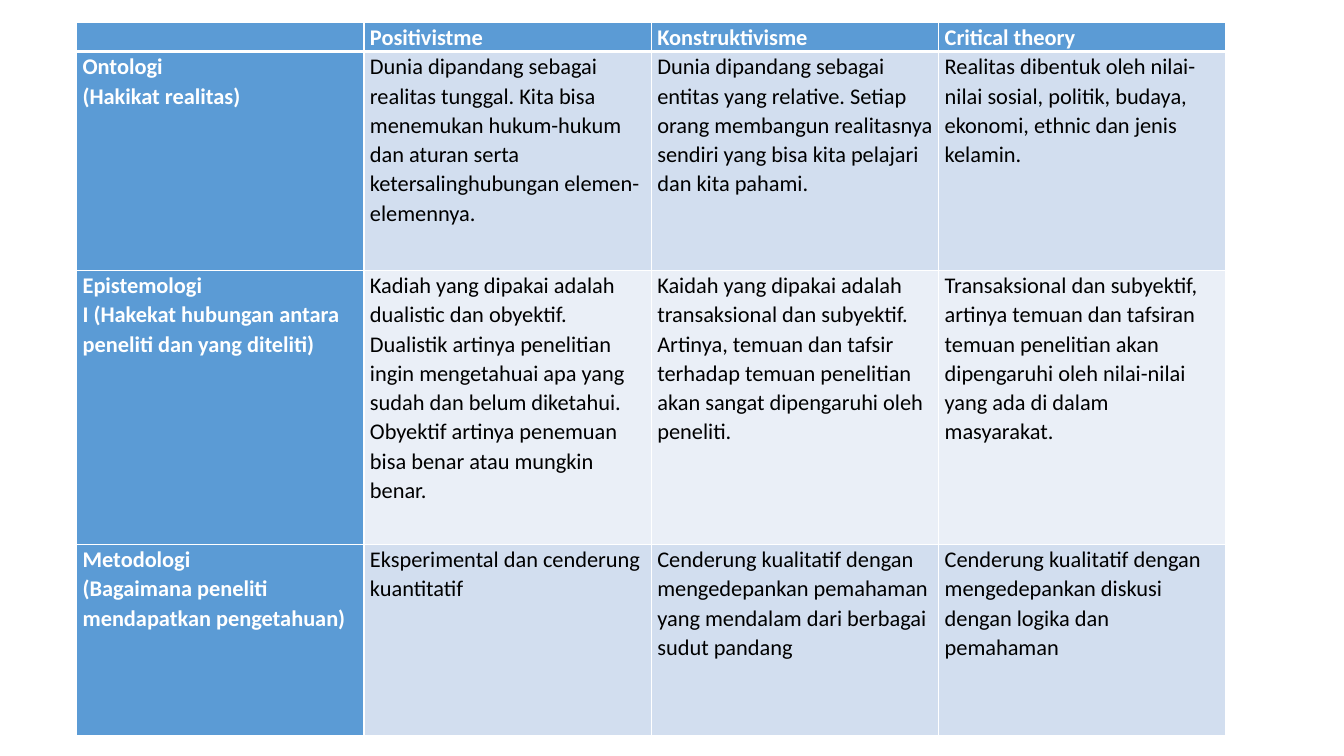
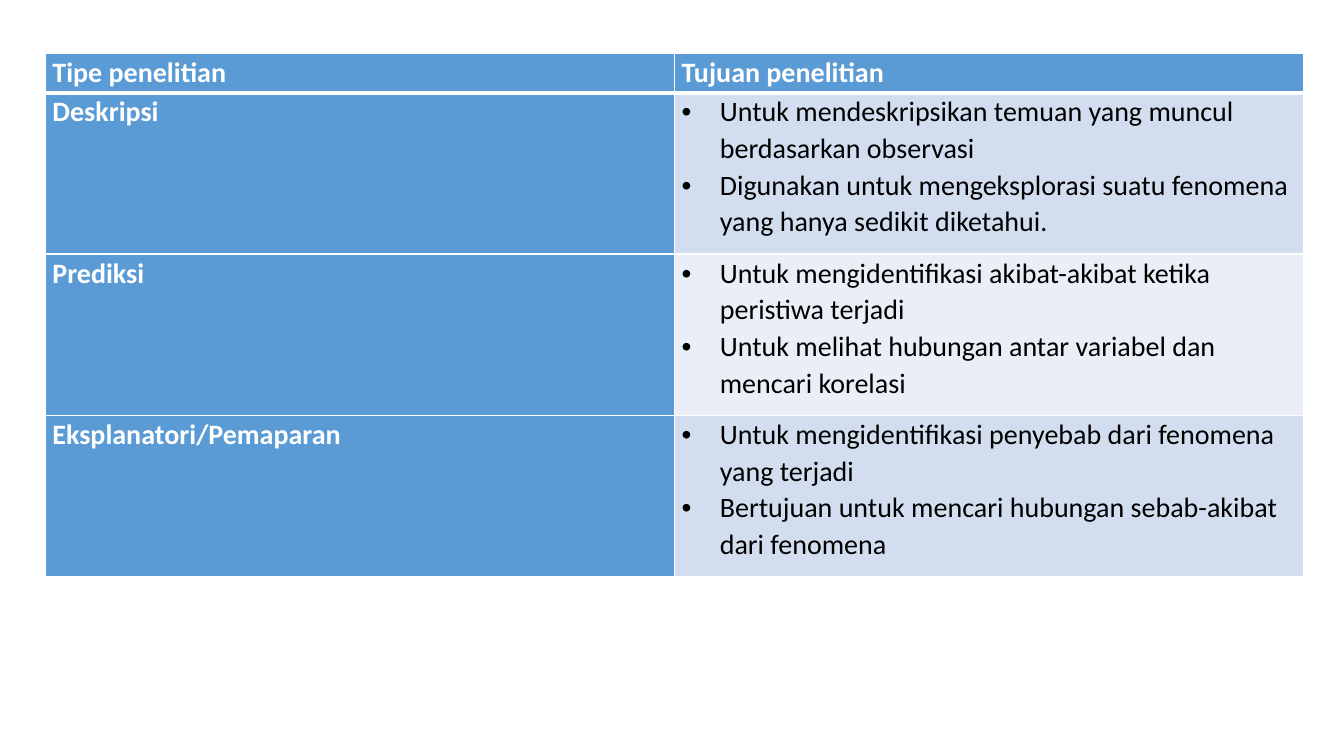
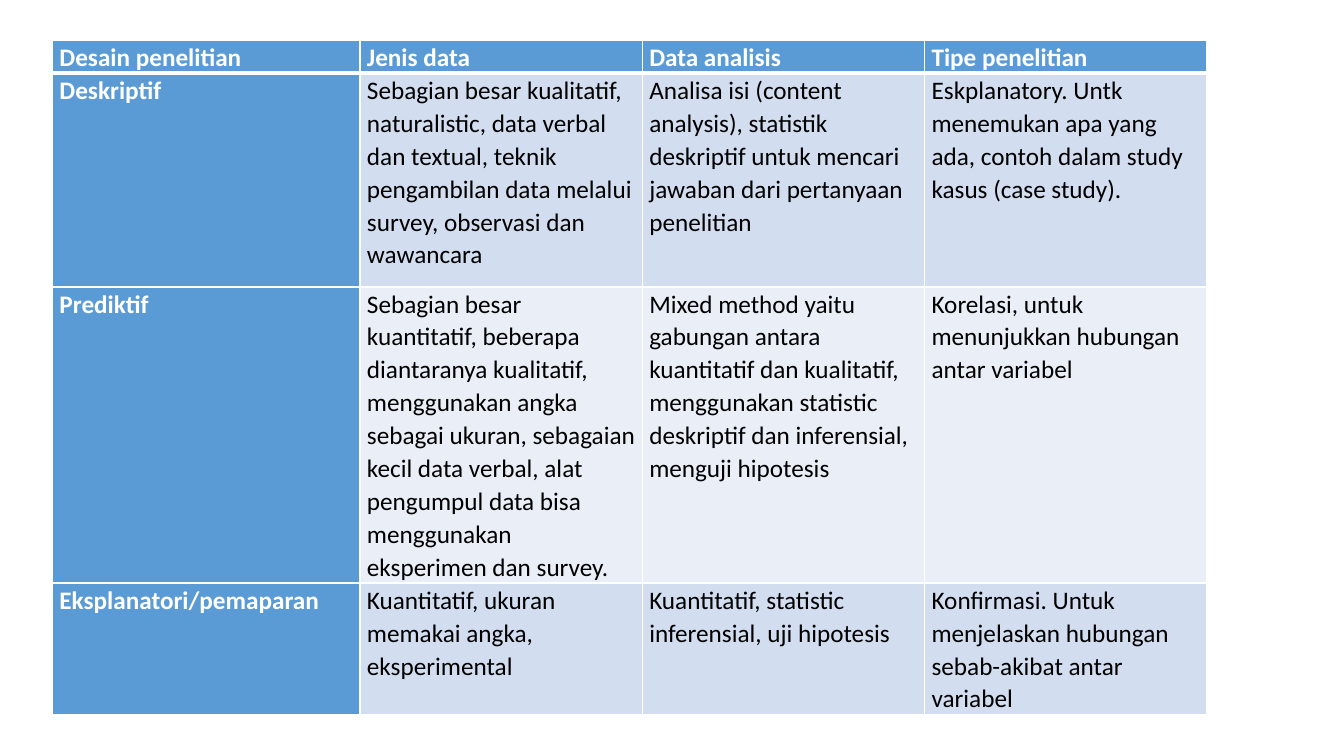
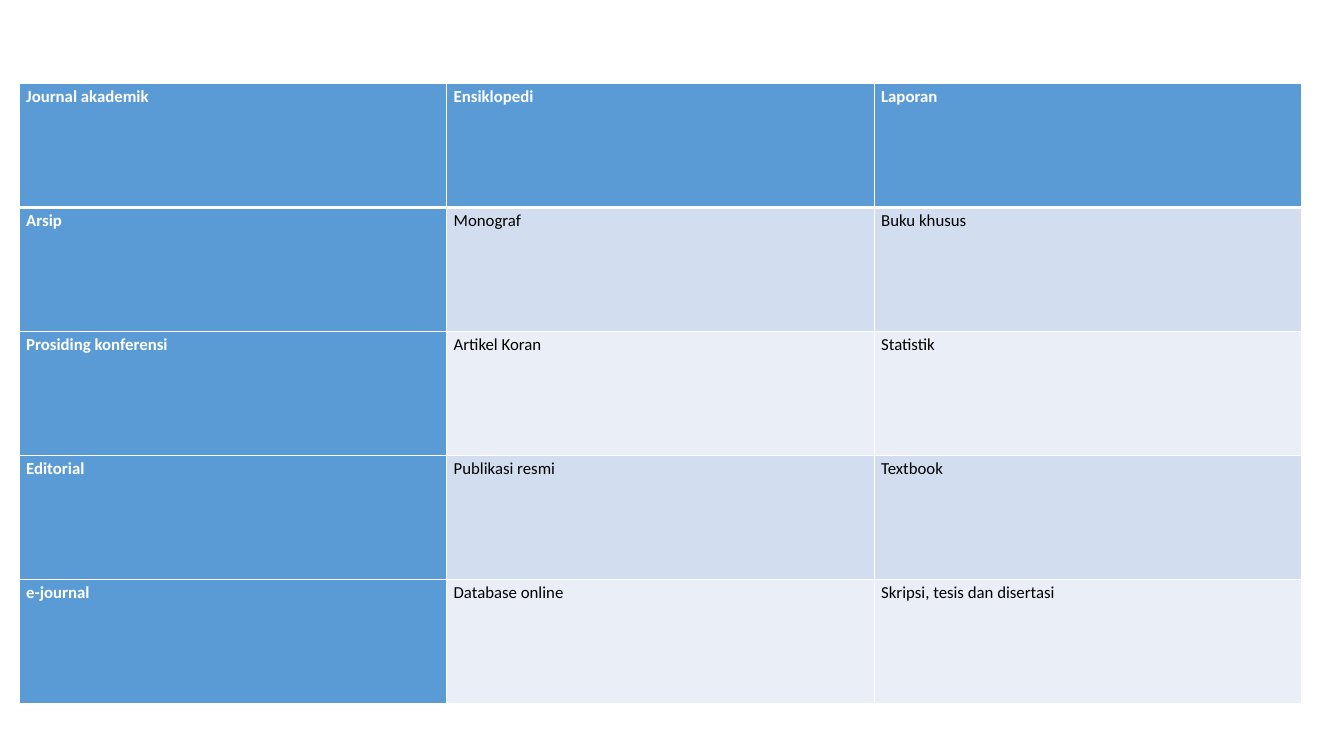
from dataclasses import dataclass

from lxml import etree
from pptx import Presentation
from pptx.dml.color import RGBColor
from pptx.enum.text import PP_ALIGN
from pptx.oxml.ns import qn
from pptx.util import Inches, Pt

LEFT = PP_ALIGN.LEFT
JUSTIFY = PP_ALIGN.JUSTIFY
FONT = "Calibri"
COLORS = {
    "heading": "5B9BD5",
    "odd_band": "D2DEEF",
    "even_band": "EAEFF7",
    "border": "FFFFFF",
    "heading_text": "FFFFFF",
    "body_text": "000000",
}
BULLET_INDENT = 0.38
THIN, THICK = 1, 3


@dataclass
class TextStyle:
    """Type settings shared by all cells of a table."""

    size: int
    margin: float = 0.07
    line_spacing: float = 1.07
    space_after: int = 0
    alignment: PP_ALIGN = LEFT
    bulleted: bool = False


PARADIGMS = [
    ["", "Positivistme", "Konstruktivisme", "Critical theory"],
    [
        "Ontologi\n(Hakikat realitas)",
        "Dunia dipandang sebagai realitas tunggal. Kita bisa menemukan hukum-hukum dan aturan "
        "serta ketersalinghubungan elemen-elemennya.",
        "Dunia dipandang sebagai entitas yang relative. Setiap orang membangun realitasnya "
        "sendiri yang bisa kita pelajari dan kita pahami.",
        "Realitas dibentuk oleh nilai-nilai sosial, politik, budaya, ekonomi, ethnic dan jenis "
        "kelamin.",
    ],
    [
        "Epistemologi\nI (Hakekat hubungan antara peneliti dan yang diteliti)",
        "Kadiah yang dipakai adalah dualistic dan obyektif. Dualistik artinya penelitian ingin "
        "mengetahuai apa yang sudah dan belum diketahui. Obyektif artinya penemuan bisa benar "
        "atau mungkin benar.",
        "Kaidah yang dipakai adalah transaksional dan subyektif. Artinya, temuan dan tafsir "
        "terhadap temuan penelitian akan sangat dipengaruhi oleh peneliti.",
        "Transaksional dan subyektif, artinya temuan dan tafsiran temuan penelitian akan "
        "dipengaruhi oleh nilai-nilai yang ada di dalam masyarakat.",
    ],
    [
        "Metodologi\n(Bagaimana peneliti mendapatkan pengetahuan)",
        "Eksperimental dan cenderung kuantitatif",
        "Cenderung kualitatif dengan mengedepankan pemahaman yang mendalam dari berbagai sudut "
        "pandang",
        "Cenderung kualitatif dengan mengedepankan diskusi dengan logika dan pemahaman",
    ],
]
RESEARCH_AIMS = [
    ["Tipe penelitian", "Tujuan penelitian"],
    [
        "Deskripsi",
        "Untuk mendeskripsikan temuan yang muncul berdasarkan observasi\n"
        "Digunakan untuk mengeksplorasi suatu fenomena yang hanya sedikit diketahui.",
    ],
    [
        "Prediksi",
        "Untuk mengidentifikasi akibat-akibat ketika peristiwa terjadi\n"
        "Untuk melihat hubungan antar variabel dan mencari korelasi",
    ],
    [
        "Eksplanatori/Pemaparan",
        "Untuk mengidentifikasi penyebab dari fenomena yang terjadi\n"
        "Bertujuan untuk mencari hubungan sebab-akibat dari fenomena",
    ],
]
RESEARCH_DESIGNS = [
    ["Desain penelitian", "Jenis data", "Data analisis", "Tipe penelitian"],
    [
        "Deskriptif",
        "Sebagian besar kualitatif, naturalistic, data verbal dan textual, teknik pengambilan "
        "data melalui survey, observasi dan wawancara",
        "Analisa isi (content analysis), statistik deskriptif untuk mencari jawaban dari "
        "pertanyaan penelitian",
        "Eskplanatory. Untk menemukan apa yang ada, contoh dalam study kasus (case study).",
    ],
    [
        "Prediktif",
        "Sebagian besar kuantitatif, beberapa diantaranya kualitatif, menggunakan angka sebagai "
        "ukuran, sebagaian kecil data verbal, alat pengumpul data bisa menggunakan eksperimen "
        "dan survey.",
        "Mixed method yaitu gabungan antara kuantitatif dan kualitatif, menggunakan statistic "
        "deskriptif dan inferensial, menguji hipotesis",
        "Korelasi, untuk menunjukkan hubungan antar variabel",
    ],
    [
        "Eksplanatori/pemaparan",
        "Kuantitatif, ukuran memakai angka, eksperimental",
        "Kuantitatif, statistic inferensial, uji hipotesis",
        "Konfirmasi. Untuk menjelaskan hubungan sebab-akibat antar variabel",
    ],
]
SOURCES = [
    ["Journal akademik", "Ensiklopedi", "Laporan"],
    ["Arsip", "Monograf", "Buku khusus"],
    ["Prosiding konferensi", "Artikel Koran", "Statistik"],
    ["Editorial", "Publikasi resmi", "Textbook"],
    ["e-journal", "Database online", "Skripsi, tesis dan disertasi"],
]


def set_borders(cell, top, bottom):
    """Draw the four cell borders, with top and bottom widths in points."""
    properties = cell._tc.get_or_add_tcPr()
    sides = {"lnL": THIN, "lnR": THIN, "lnT": top, "lnB": bottom}
    for position, (side, width) in enumerate(sides.items()):
        line = etree.Element(qn(f"a:{side}"), w=str(Pt(width)))
        fill = etree.SubElement(line, qn("a:solidFill"))
        etree.SubElement(fill, qn("a:srgbClr"), val=COLORS["border"])
        properties.insert(position, line)


def add_bullet(paragraph):
    """Give a paragraph a round bullet and a hanging indent."""
    properties = paragraph._p.get_or_add_pPr()
    properties.set("marL", str(Inches(BULLET_INDENT)))
    properties.set("indent", str(-Inches(BULLET_INDENT)))
    etree.SubElement(properties, qn("a:buFont"), typeface="Arial")
    etree.SubElement(properties, qn("a:buChar"), char="•")


def write_cell(cell, text, style, is_heading):
    """Write one paragraph for each line of the text."""
    cell.margin_left = cell.margin_right = Inches(style.margin)
    cell.margin_top = cell.margin_bottom = 0
    color = COLORS["heading_text" if is_heading else "body_text"]
    for index, line in enumerate(text.split("\n")):
        frame = cell.text_frame
        paragraph = frame.add_paragraph() if index else frame.paragraphs[0]
        paragraph.alignment = style.alignment
        paragraph.line_spacing = style.line_spacing
        paragraph.space_after = Pt(style.space_after)
        if style.bulleted and not is_heading:
            add_bullet(paragraph)
        if not line:
            etree.SubElement(paragraph._p, qn("a:endParaRPr"), sz=str(style.size * 100))
            continue
        run = paragraph.add_run()
        run.text = line
        run.font.name = FONT
        run.font.size = Pt(style.size)
        run.font.bold = is_heading
        run.font.color.rgb = RGBColor.from_string(color)


def add_table_slide(presentation, content, left, top, widths, heights, style):
    """Add a slide with one banded table that has a heading row and column."""
    slide = presentation.slides.add_slide(presentation.slide_layouts[6])
    table = slide.shapes.add_table(
        len(heights), len(widths), Inches(left), Inches(top),
        Inches(sum(widths)), Inches(sum(heights)),
    ).table
    table.first_col = True
    for column, width in zip(table.columns, widths):
        column.width = Inches(width)
    for row, height in zip(table.rows, heights):
        row.height = Inches(height)
    for row_index, texts in enumerate(content):
        band = "odd_band" if row_index % 2 else "even_band"
        for column_index, text in enumerate(texts):
            cell = table.cell(row_index, column_index)
            is_heading = row_index == 0 or column_index == 0
            cell.fill.solid()
            cell.fill.fore_color.rgb = RGBColor.from_string(
                COLORS["heading" if is_heading else band]
            )
            set_borders(
                cell,
                THICK if row_index == 1 else THIN,
                THICK if row_index == 0 else THIN,
            )
            write_cell(cell, text, style, is_heading)


def main():
    """Build the four table slides and save them."""
    presentation = Presentation()
    presentation.slide_width = Inches(13.33)
    presentation.slide_height = Inches(7.5)
    add_table_slide(
        presentation, PARADIGMS, 0.76, 0.22, [2.85] * 4, [0.27, 2.17, 2.72, 1.9],
        TextStyle(16, margin=0.06),
    )
    add_table_slide(
        presentation, RESEARCH_AIMS, 0.45, 0.53, [6.24] * 2, [0.39] + [1.6] * 3,
        TextStyle(20, bulleted=True),
    )
    add_table_slide(
        presentation, RESEARCH_DESIGNS, 0.52, 0.4, [3.05] + [2.8] * 3,
        [0.26, 2.12, 2.91, 1.06], TextStyle(18),
    )
    add_table_slide(
        presentation, SOURCES, 0.19, 0.83, [4.24] * 3, [1.23] * 5,
        TextStyle(12, line_spacing=1.15, space_after=10, alignment=JUSTIFY),
    )
    presentation.save("out.pptx")


if __name__ == "__main__":
    main()
